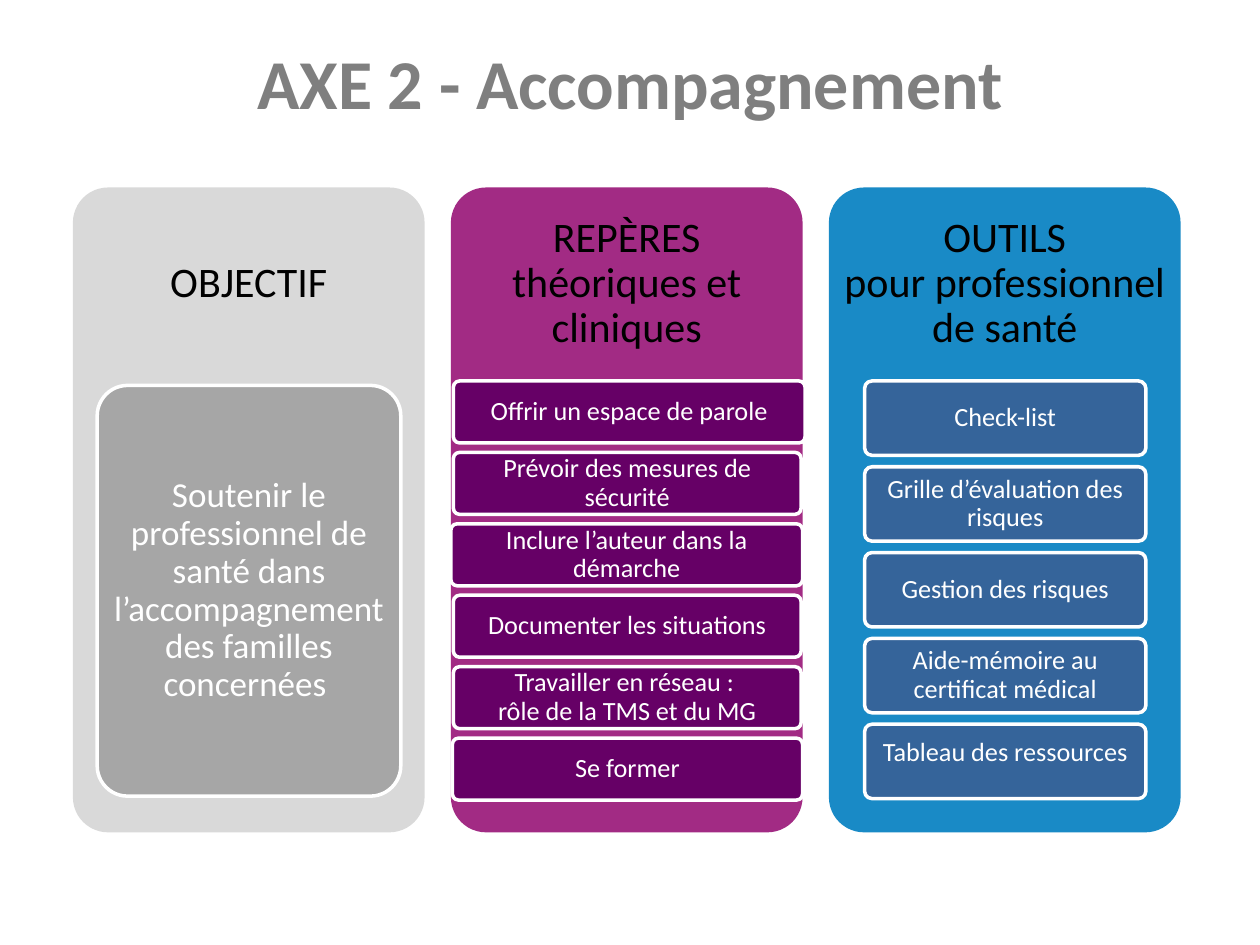
from pptx import Presentation
from pptx.dml.color import RGBColor
from pptx.enum.shapes import MSO_SHAPE
from pptx.enum.text import MSO_ANCHOR, PP_ALIGN
from pptx.util import Cm, Pt

ROUND = MSO_SHAPE.ROUNDED_RECTANGLE
MIDDLE = MSO_ANCHOR.MIDDLE
CENTER = PP_ALIGN.CENTER

FONT = "Calibri"
COLORS = {
    "title": "7F7F7F", "black": "000000", "white": "FFFFFF",
    "silver": "D9D9D9", "gray": "A6A6A6",
    "pink": "A22B84", "plum": "660066",
    "sky": "198AC6", "steel": "35649A",
}

PANEL_LEFT, PANEL_TOP, PANEL_STEP = 1.47, 3.78, 7.62
PANEL_WIDTH, PANEL_HEIGHT, HEAD_HEIGHT = 7.09, 13, 3.89
CARD_TOP = 7.68

GOAL = "Soutenir le professionnel de santé dans l’accompagnement des familles concernées "
PANELS = [
    ("silver", ["OBJECTIF"]),
    ("pink", ["REPÈRES théoriques et cliniques"]),
    ("sky", ["OUTILS", "pour professionnel de santé"]),
]
# Left edge, width and lines of each card
MARKS = [
    (9.14, 7.09, ["Offrir un espace de parole"]),
    (9.14, 7.01, ["Prévoir des mesures de sécurité"]),
    (9.09, 7.09, ["Inclure l’auteur dans la démarche"]),
    (9.14, 7.01, ["Documenter les situations"]),
    (9.14, 7.01, ["Travailler en réseau : ", "rôle de la TMS et du MG"]),
    (9.12, 7.06, ["Se former"]),
]
TOOLS = [
    "Check-list",
    "Grille d’évaluation des risques",
    "Gestion des risques",
    "Aide-mémoire au certificat médical",
    "Tableau des ressources",
]


def color(name):
    return RGBColor.from_string(COLORS[name])


class Deck:
    """Holds the style and the current slide."""

    def __init__(self, slide):
        self.slide = slide

    def label(self, frame, lines, size, ink, pad=None, bold=False, space=0.9):
        """Fill a frame with centred lines; pad is (side, top and bottom) in cm."""
        frame.word_wrap = True
        frame.vertical_anchor = MIDDLE
        if pad:
            frame.margin_left = frame.margin_right = Cm(pad[0])
            frame.margin_top = frame.margin_bottom = Cm(pad[1])
        for i, line in enumerate(lines):
            para = frame.add_paragraph() if i else frame.paragraphs[0]
            para.alignment = CENTER
            para.line_spacing = space
            run = para.add_run()
            run.text = line
            run.font.name = FONT
            run.font.size = Pt(size)
            run.font.bold = bold
            run.font.color.rgb = color(ink)

    def title(self, text):
        shape = self.slide.shapes.title
        shape.left, shape.top = Cm(0), Cm(0.36)
        shape.width, shape.height = Cm(25.4), Cm(2.57)
        self.label(shape.text_frame, [text], 40, "title", bold=True, space=1.0)

    def block(self, box, fill, line=None):
        shape = self.slide.shapes.add_shape(ROUND, *map(Cm, box))
        shape.adjustments[0] = 0.1
        shape.shadow.inherit = False
        shape.fill.solid()
        shape.fill.fore_color.rgb = color(fill)
        if line:
            shape.line.color.rgb = color(line)
            shape.line.width = Pt(2)
        else:
            shape.line.fill.background()
        return shape

    def panel(self, left, fill, lines):
        self.block((left, PANEL_TOP, PANEL_WIDTH, PANEL_HEIGHT), fill)
        head = self.slide.shapes.add_textbox(
            Cm(left), Cm(PANEL_TOP), Cm(PANEL_WIDTH), Cm(HEAD_HEIGHT))
        self.label(head.text_frame, lines, 24, "black", (0.25, 0.25))

    def card(self, box, fill, lines, size=15, pad=(0.1, 0.08)):
        shape = self.block(box, fill, "white")
        self.label(shape.text_frame, lines, size, "white", pad)
        return shape


def main():
    prs = Presentation()
    prs.slide_width, prs.slide_height = Cm(25.4), Cm(19.05)
    deck = Deck(prs.slides.add_slide(prs.slide_layouts[5]))

    deck.title("AXE 2 - Accompagnement")
    for i, (fill, lines) in enumerate(PANELS):
        deck.panel(PANEL_LEFT + i * PANEL_STEP, fill, lines)

    deck.card((1.96, 7.77, 6.12, 8.28), "gray", [GOAL], 20, (0.15, 0.11))
    for i, (left, width, lines) in enumerate(MARKS):
        deck.card((left, CARD_TOP + i * 1.44, width, 1.25), "plum", lines)
    for i, text in enumerate(TOOLS):
        last = deck.card((17.43, CARD_TOP + i * 1.73, 5.67, 1.5), "steel", [text])
    # The last tool sits a little above the middle of its card
    last.text_frame.margin_bottom = Cm(0.4)

    prs.save("out.pptx")


if __name__ == "__main__":
    main()
